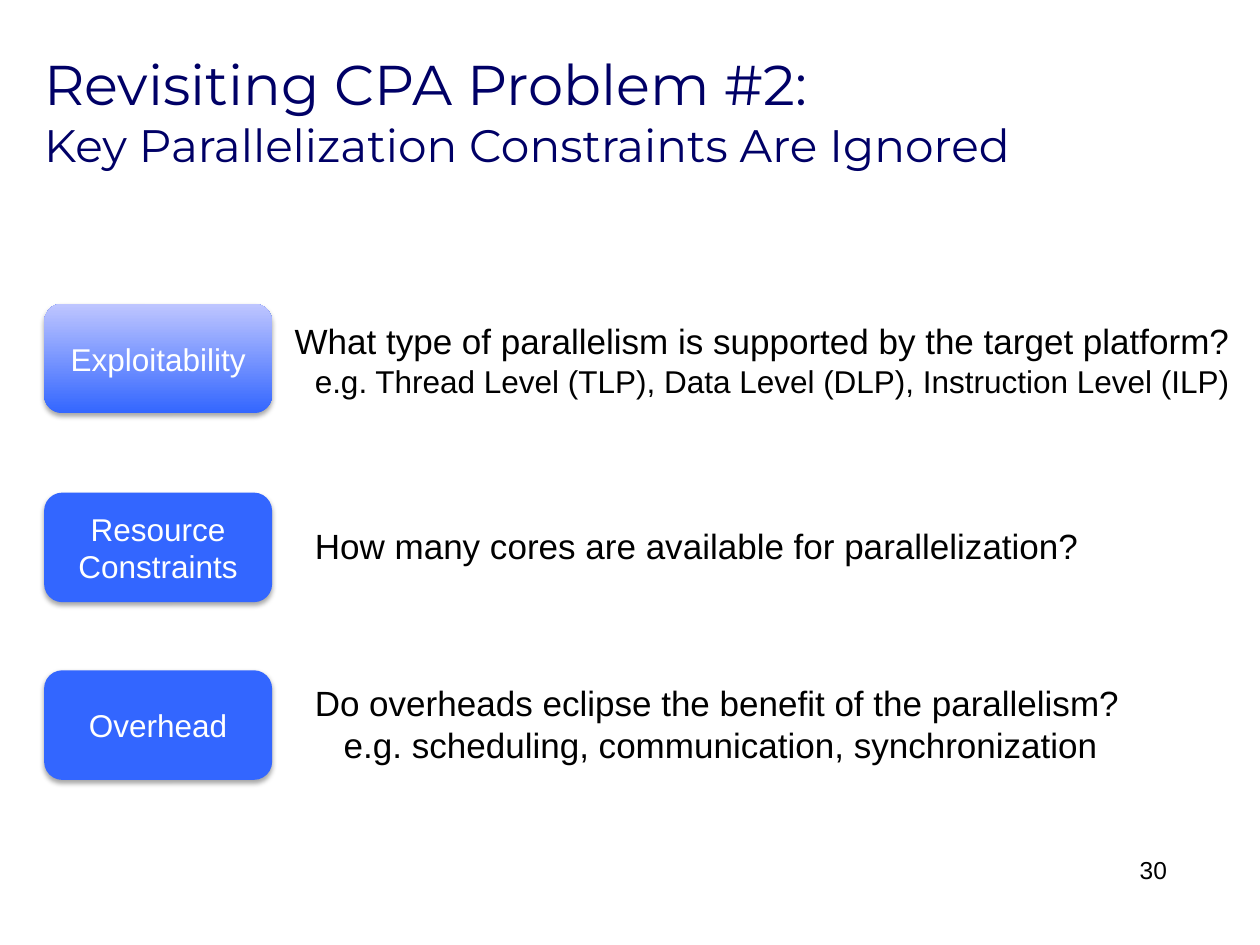
from dataclasses import dataclass

from lxml.etree import SubElement
from pptx import Presentation
from pptx.dml.color import RGBColor
from pptx.enum.shapes import MSO_SHAPE as Shape
from pptx.enum.text import MSO_ANCHOR as Anchor, MSO_AUTO_SIZE as AutoSize, PP_ALIGN as Align
from pptx.oxml.ns import qn
from pptx.util import Inches, Pt


@dataclass(frozen=True)
class Theme:
    navy: str = "000066"
    blue: str = "3366FF"
    pale_blue: str = "BFC6FF"
    black: str = "000000"
    white: str = "FFFFFF"
    title_font: str = "Montserrat"
    body_font: str = "Arial"
    title_size: int = 32
    subtitle_size: int = 26
    question_size: int = 20
    label_size: int = 18
    number_size: int = 14


@dataclass(frozen=True)
class Line:
    text: str
    size: int
    indent: float = 0


@dataclass(frozen=True)
class Constraint:
    label: str
    top: float
    text_area: tuple[float, float, float, float]
    lines: tuple[Line, ...]
    wrap: bool = False
    gradient: bool = False


THEME = Theme()
LABEL_LEFT, LABEL_WIDTH, LABEL_HEIGHT = 0.35, 1.81, 0.87

CONSTRAINTS = (
    Constraint(
        "Exploitability", 2.41, (2.24, 2.49, 7.8, 0.77),
        (Line("What type of parallelism is supported by the target platform?", THEME.question_size),
         Line("e.g. Thread Level (TLP), Data Level (DLP), Instruction Level (ILP)",
              THEME.label_size, 0.16)),
        wrap=True, gradient=True),
    Constraint(
        "Resource\vConstraints", 3.91, (2.4, 4.11, 6.31, 0.44),
        (Line("How many cores are available for parallelization?", THEME.question_size),)),
    Constraint(
        "Overhead", 5.32, (2.4, 5.36, 6.64, 0.77),
        (Line("Do overheads eclipse the benefit of the parallelism?", THEME.question_size),
         Line("e.g. scheduling, communication, synchronization", THEME.question_size, 0.23))),
)


def format_font(font, size: int, color: str, name: str = THEME.body_font) -> None:
    for attribute, value in {"size": Pt(size), "name": name, "bold": False}.items():
        setattr(font, attribute, value)
    font.color.rgb = RGBColor.from_string(color)


def add_soft_shadow(box) -> None:
    box.shadow.inherit = False
    effects = box._element.spPr.find(qn("a:effectLst"))
    shadow = SubElement(effects, qn("a:outerShdw"), blurRad=str(Pt(3.1)), dist=str(Pt(1.8)),
                        dir="5400000", rotWithShape="0")
    color = SubElement(shadow, qn("a:srgbClr"), val=THEME.black)
    SubElement(color, qn("a:alpha"), val="35000")


def add_label(page, constraint: Constraint) -> None:
    area = (LABEL_LEFT, constraint.top, LABEL_WIDTH, LABEL_HEIGHT)
    box = page.shapes.add_shape(Shape.ROUNDED_RECTANGLE, *map(Inches, area))
    if constraint.gradient:
        box.fill.gradient()
        box.fill.gradient_angle = 90
        for stop, color in zip(box.fill.gradient_stops, (THEME.blue, THEME.pale_blue)):
            stop.color.rgb = RGBColor.from_string(color)
    else:
        box.fill.solid()
        box.fill.fore_color.rgb = RGBColor.from_string(THEME.blue)
    box.line.fill.background()
    add_soft_shadow(box)
    frame = box.text_frame
    frame.text = constraint.label
    frame.vertical_anchor = Anchor.MIDDLE
    para = frame.paragraphs[0]
    para.alignment = Align.CENTER
    format_font(para.font, THEME.label_size, THEME.white)
    for span in para.runs:
        format_font(span.font, THEME.label_size, THEME.white)


def add_text(page, area: tuple[float, float, float, float], lines: tuple[Line, ...],
             wrap: bool = True, align: Align = Align.LEFT) -> None:
    frame = page.shapes.add_textbox(*map(Inches, area)).text_frame
    frame.word_wrap = wrap
    for index, line in enumerate(lines):
        para = frame.add_paragraph() if index else frame.paragraphs[0]
        para.alignment = align
        if line.indent:
            para._p.get_or_add_pPr().set("marL", str(Inches(line.indent)))
        span = para.add_run()
        span.text = line.text
        format_font(span.font, line.size, THEME.black)


def fill_title(page) -> None:
    title = page.shapes.title
    area = {"left": 0.25, "top": 0.25, "width": 9.75, "height": 1.25}
    for attribute, value in area.items():
        setattr(title, attribute, Inches(value))
    frame = title.text_frame
    frame.auto_size = AutoSize.NONE
    frame.word_wrap = True
    frame.vertical_anchor = Anchor.MIDDLE
    para = frame.paragraphs[0]
    para.alignment = Align.LEFT
    lines = (Line("Revisiting CPA Problem #2:", THEME.title_size),
             Line("Key Parallelization Constraints Are Ignored", THEME.subtitle_size))
    for index, line in enumerate(lines):
        if index:
            para.add_line_break()
        span = para.add_run()
        span.text = line.text
        format_font(span.font, line.size, THEME.navy, THEME.title_font)


def main() -> None:
    deck = Presentation()
    deck.slide_width, deck.slide_height = Inches(10), Inches(7.5)
    page = deck.slides.add_slide(deck.slide_layouts[5])

    # Title and subtitle
    fill_title(page)

    # Each constraint with its question
    for constraint in CONSTRAINTS:
        add_label(page, constraint)
        add_text(page, constraint.text_area, constraint.lines, constraint.wrap)

    # Page number
    add_text(page, (7.28, 6.74, 2.08, 0.5), (Line("30", THEME.number_size),), align=Align.RIGHT)

    deck.save("out.pptx")


if __name__ == "__main__":
    main()
